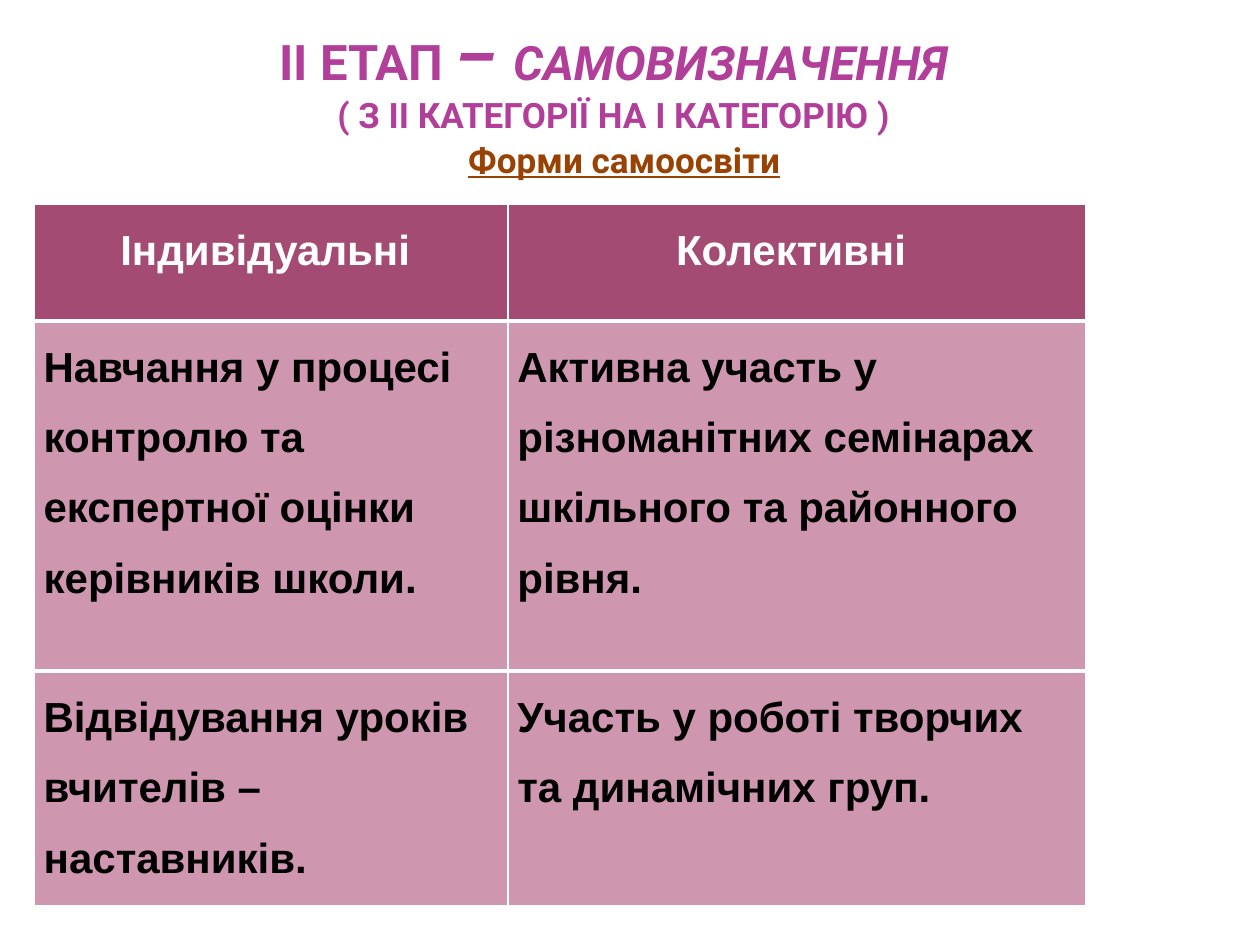
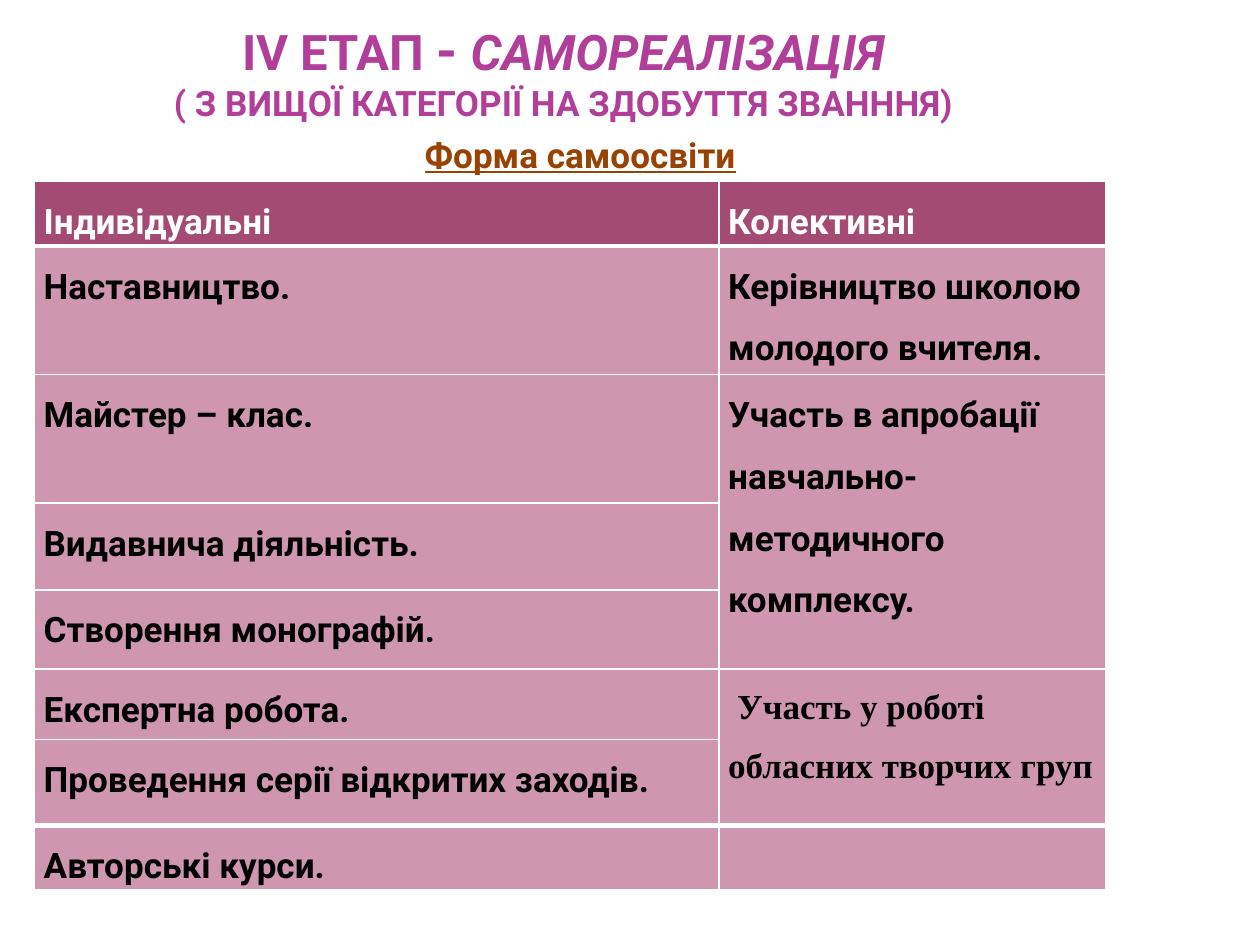
from copy import deepcopy

from pptx import Presentation
from pptx.dml.color import RGBColor
from pptx.enum.text import MSO_ANCHOR as Anchor, MSO_AUTO_SIZE as AutoSize, PP_ALIGN as Align
from pptx.oxml import parse_xml
from pptx.oxml.ns import nsdecls
from pptx.util import Cm, Pt

WHITE = RGBColor(0xFF, 0xFF, 0xFF)
BLACK = RGBColor(0, 0, 0)
ORCHID = RGBColor(0xB1, 0x3F, 0x9A)
PLUM = RGBColor(0x5E, 0x1A, 0x50)
BROWN = RGBColor(0x98, 0x42, 0x04)
BERRY = RGBColor(0xA3, 0x4B, 0x73)
ROSE = RGBColor(0xCF, 0x96, 0xB0)

ROBOTO, ARIAL, TIMES = "Roboto", "Arial", "Times New Roman"
TITLE_FORMAT = dict(name=ROBOTO, bold=True)
CAPTION_FORMAT = dict(name=ROBOTO, size=Pt(20), bold=True, underline=True)
TITLE_FRAME = dict(auto_size=AutoSize.NONE, vertical_anchor=Anchor.BOTTOM, word_wrap=True,
                   margin_left=Cm(0.13), margin_right=Cm(0.13), margin_top=0, margin_bottom=0)
CELL_MARGINS = dict(margin_left=Cm(0.19), margin_right=Cm(0.19), margin_top=0, margin_bottom=0)
TABLE_LEFT = Cm(0.69)
THIN, THICK = Pt(1), Pt(3)


def apply(target, values):
    for name, value in values.items():
        setattr(target, name, value)


class StageDeck:
    def __init__(self):
        self.prs = Presentation()
        self.prs.slide_width, self.prs.slide_height = Cm(25.4), Cm(19.05)
        self.slide = None

    def new_slide(self):
        self.slide = self.prs.slides.add_slide(self.prs.slide_layouts[5])

    def run(self, paragraph, text, color, **values):
        run = paragraph.add_run()
        run.text = text
        apply(run.font, values)
        run.font.color.rgb = color
        return run

    def title(self, left, top, height, lines):
        title = self.slide.shapes.title
        apply(title, dict(left=Cm(left), top=Cm(top), width=Cm(20.12), height=Cm(height)))
        apply(title.text_frame, TITLE_FRAME)
        paragraph = title.text_frame.paragraphs[0]
        paragraph.alignment = Align.CENTER
        for index, line in enumerate(lines):
            if index:
                paragraph.add_line_break()
                paragraph._p[-1].append(deepcopy(properties))
            for text, size, italic in line:
                run = self.run(paragraph, text, ORCHID, size=Pt(size), italic=italic, **TITLE_FORMAT)
                properties = run.font._element
                properties.insert(0, self.outline("ln", Pt(0.04), PLUM))

    def caption(self, left, top, text):
        box = self.slide.shapes.add_textbox(Cm(left), Cm(top), Cm(6.85), Cm(1.12))
        apply(box.text_frame, dict(word_wrap=False, auto_size=AutoSize.SHAPE_TO_FIT_TEXT))
        self.run(box.text_frame.paragraphs[0], text, BROWN, **CAPTION_FORMAT)

    def outline(self, tag, width, color):
        return parse_xml(f'<a:{tag} {nsdecls("a")} w="{int(width)}"><a:solidFill>'
                         f'<a:srgbClr val="{color}"/></a:solidFill></a:{tag}>')

    def table(self, top, widths, heights, texts, font, thick_below,
              merges=(), header_align=Align.LEFT):
        frame = self.slide.shapes.add_table(len(heights), len(widths), TABLE_LEFT, Cm(top),
                                            Cm(sum(widths)), Cm(sum(heights)))
        table = frame.table
        table.horz_banding = False
        for column, width in zip(table.columns, widths):
            column.width = Cm(width)
        for row, height in zip(table.rows, heights):
            row.height = Cm(height)
        for first, last in merges:
            table.cell(first, 1).merge(table.cell(last, 1))
        for row in range(len(heights)):
            for column in range(len(widths)):
                cell = table.cell(row, column)
                last_row = row + cell.span_height - 1 if cell.is_merge_origin else row
                self.style_cell(cell, BERRY if row == 0 else ROSE,
                                row - 1 in thick_below, last_row in thick_below)
        for (row, column), text in texts.items():
            paragraph = table.cell(row, column).text_frame.paragraphs[0]
            paragraph.line_spacing = 1.5
            paragraph.alignment = header_align if row == 0 else Align.LEFT
            self.run(paragraph, text, BLACK if row else WHITE, bold=True, **font)
        return table

    def style_cell(self, cell, color, thick_top, thick_bottom):
        apply(cell, CELL_MARGINS)
        borders = dict(lnL=THIN, lnR=THIN, lnT=THICK if thick_top else THIN,
                       lnB=THICK if thick_bottom else THIN)
        properties = cell._tc.get_or_add_tcPr()
        for tag, width in borders.items():
            properties.append(self.outline(tag, width, WHITE))
        cell.fill.solid()
        cell.fill.fore_color.rgb = color


def column_texts(column, texts, rows=None):
    return {(row, column): text for row, text in zip(rows or range(len(texts)), texts)}


def self_determination(deck):
    deck.new_slide()
    deck.title(2.31, 0, 2.74, [
        [("ІІ ЕТАП ", 28, False), ("– ", 38, True), ("САМОВИЗНАЧЕННЯ", 27, True)],
        [("( З ІІ КАТЕГОРІЇ НА І КАТЕГОРІЮ )", 20, False)],
    ])
    individual = ["Індивідуальні ",
                  "Навчання у процесі контролю та експертної оцінки керівників школи.",
                  "Відвідування уроків вчителів – наставників."]
    collective = ["Колективні ",
                  "Активна участь у різноманітних семінарах шкільного та районного рівня.",
                  "Участь у роботі творчих та динамічних груп."]
    deck.table(4.11, [9.55, 11.65], [2.36, 7.06, 4.72],
               column_texts(0, individual) | column_texts(1, collective),
               dict(name=ARIAL, size=Pt(24)), thick_below=(0, 1), header_align=Align.CENTER)
    deck.caption(9.19, 2.67, "Форми самоосвіти")


def self_realization(deck):
    deck.new_slide()
    deck.title(1.3, -0.69, 3.18, [
        [("ІV ЕТАП ", 28, False), ("- ", 31, False), ("САМОРЕАЛІЗАЦІЯ", 28, True)],
        [("( З ВИЩОЇ КАТЕГОРІЇ НА ЗДОБУТТЯ ЗВАНННЯ)", 20, False)],
    ])
    individual = ["Індивідуальні", "Наставництво.", "Майстер – клас.", "Видавнича діяльність.",
                  "Створення монографій.", "Експертна робота.",
                  "Проведення серії відкритих заходів.", "Авторські курси."]
    collective = ["Колективні", "Керівництво школою молодого вчителя.",
                  "Участь в апробації навчально-методичного комплексу.",
                  "Участь у роботі обласних творчих груп"]
    forms = deck.table(3.66, [13.8, 7.8], [1.3, 2.59, 2.59, 1.75, 1.6, 1.42, 1.73, 1.3],
                       column_texts(0, individual) | column_texts(1, collective, (0, 1, 2, 5)),
                       dict(name=ROBOTO, size=Pt(20)), thick_below=(0, 6),
                       merges=((2, 4), (5, 6)))
    regional_groups = forms.cell(5, 1).text_frame.paragraphs[0]
    regional_groups.runs[0].font.name = TIMES
    regional_groups._p.get_or_add_pPr().set("indent", str(int(Cm(0.18))))
    deck.caption(8.31, 2.57, "Форма самоосвіти")


def main():
    deck = StageDeck()
    self_determination(deck)
    self_realization(deck)
    deck.prs.save("out.pptx")


if __name__ == "__main__":
    main()
